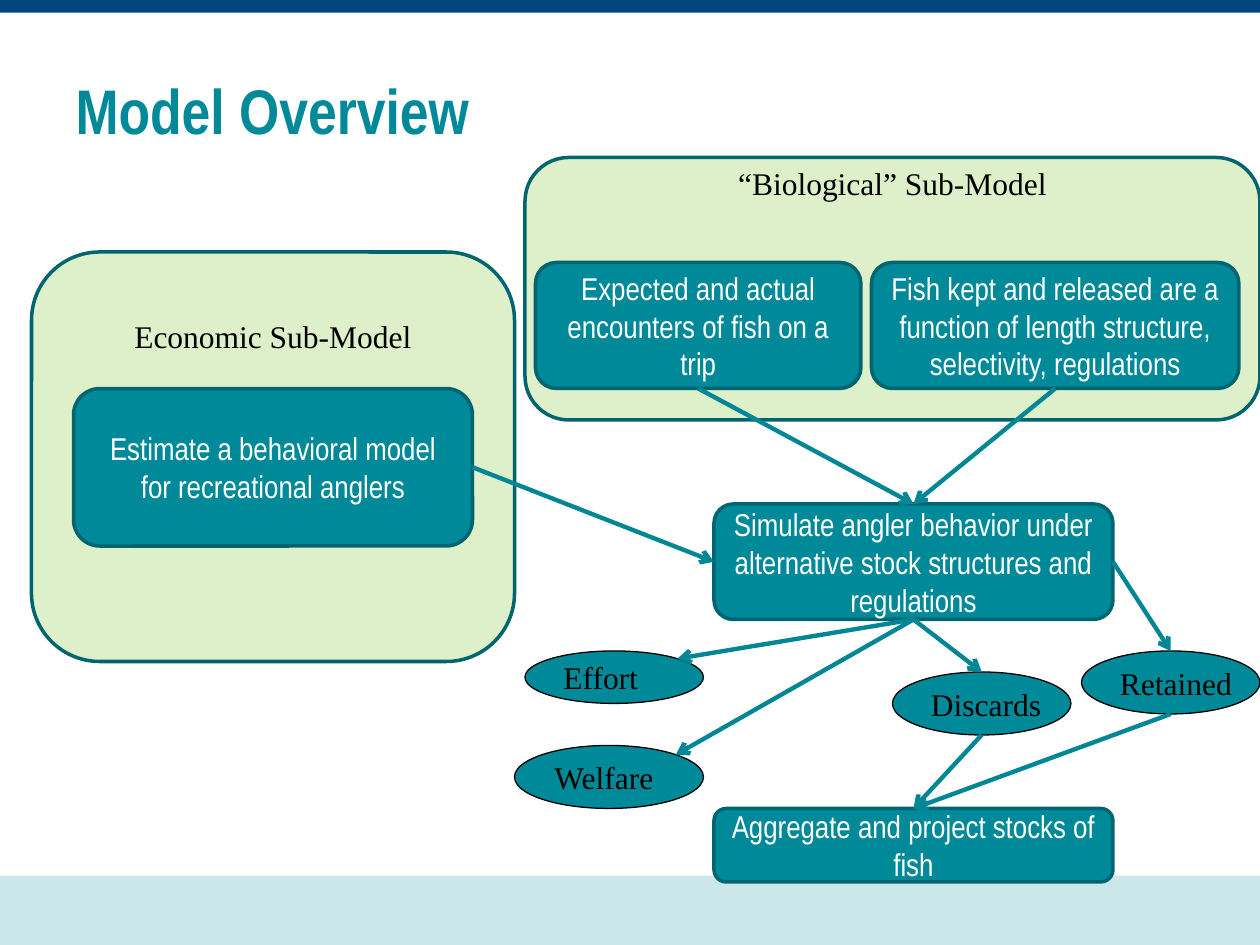
import pptx
import pptx.util
import pptx.enum.shapes
import pptx.enum.text
import pptx.dml.color
import pptx.oxml
import pptx.oxml.ns

COLS, ROWS = 120, 90
WIDTH, HEIGHT = pptx.util.Inches(10), pptx.util.Inches(7.5)
HEX = {"teal": "008998", "edge": "006570", "arrow": "008695", "green": "92D050",
       "navy": "00467F", "pale": "CCE7EA", "white": "FFFFFF", "black": "000000"}
SANS, SERIF = "Arial Narrow", "Times New Roman"
FORM = pptx.enum.shapes.MSO_SHAPE
ALIGN = pptx.enum.text.PP_ALIGN
MIDDLE = pptx.enum.text.MSO_ANCHOR.MIDDLE
CUT = 0.5 - 0.5 ** 1.5  # share of an oval's size outside its diagonal point
SIDES = {"top": (0.5, 0), "left": (0, 0.5), "bottom": (0.5, 1),
         "right": (1, 0.5), "corner": (1 - CUT, CUT)}
SITES = {"top": 0, "left": 1, "bottom": 2, "right": 3}


def color(name):
    return pptx.dml.color.RGBColor.from_string(HEX[name])


def place(col, row, wide, high):
    """Turn a box in grid units into slide lengths."""
    return (round(col * WIDTH / COLS), round(row * HEIGHT / ROWS),
            round(wide * WIDTH / COLS), round(high * HEIGHT / ROWS))


def inside(box, col, row, wide, high):
    """Shift a box so that it counts from the corner of an outer box."""
    return box[0] + col, box[1] + row, wide, high


def write(shape, text, font, tint, align, size=18, bold=False):
    para = shape.text_frame.paragraphs[0]
    para.alignment = align
    run = para.add_run()
    run.text = text
    run.font.name, run.font.size = font, pptx.util.Pt(size)
    run.font.bold = bold
    run.font.color.rgb = color(tint)


def draw(slide, form, box, fill, line=None, weight=2):
    shape = slide.shapes.add_shape(form, *place(*box))
    shape.shadow.inherit = False
    shape.fill.solid()
    shape.fill.fore_color.rgb = color(fill)
    if line:
        shape.line.color.rgb = color(line)
        shape.line.width = pptx.util.Pt(weight)
    else:
        shape.line.fill.background()
    return shape


def panel(slide, box, text, drop):
    """Draw a see-through panel with its label a few rows below the top."""
    shape = draw(slide, FORM.ROUNDED_RECTANGLE, box, "green", "edge")
    tint = shape.fill._xPr.find(".//" + pptx.oxml.ns.qn("a:srgbClr"))
    alpha = tint.makeelement(pptx.oxml.ns.qn("a:alpha"), {"val": "30000"})
    tint.append(alpha)
    label = slide.shapes.add_textbox(*place(*inside(box, 0, drop, box[2], 4.8)))
    label.text_frame.word_wrap = True
    write(label, text, SERIF, "black", ALIGN.CENTER)


def step(slide, box, text):
    shape = draw(slide, FORM.ROUNDED_RECTANGLE, box, "teal", "edge")
    shape.text_frame.word_wrap = True
    shape.text_frame.vertical_anchor = MIDDLE
    write(shape, text, SANS, "white", ALIGN.CENTER)
    return shape


def oval(slide, box, text):
    shape = draw(slide, FORM.OVAL, box, "teal", "black", 0.75)
    shape.text_frame.word_wrap = False
    shape.text_frame.vertical_anchor = MIDDLE
    write(shape, text, SERIF, "black", ALIGN.LEFT)
    return shape


def point(shape, side):
    across, down = SIDES[side]
    return (round(shape.left + across * shape.width),
            round(shape.top + down * shape.height))


def link(slide, start, out, end, into):
    """Draw an arrow between two sides, joined where the shape is a box."""
    line = slide.shapes.add_connector(pptx.enum.shapes.MSO_CONNECTOR.STRAIGHT,
                                      *point(start, out), *point(end, into))
    if start.auto_shape_type == FORM.ROUNDED_RECTANGLE:
        line.begin_connect(start, SITES[out])
    if end.auto_shape_type == FORM.ROUNDED_RECTANGLE:
        line.end_connect(end, SITES[into])
    line.line.color.rgb = color("arrow")
    line.line.width = pptx.util.Pt(2.5)
    stroke = line.line._get_or_add_ln()
    stroke.append(stroke.makeelement(pptx.oxml.ns.qn("a:tailEnd"), {"type": "arrow"}))
    props = line._element.spPr
    props.append(props.makeelement(pptx.oxml.ns.qn("a:effectLst"), {}))


def bands(slide):
    draw(slide, FORM.RECTANGLE, (0, 83.4, COLS, 6.6), "pale")
    draw(slide, FORM.RECTANGLE, (0, 0, COLS, 1.2), "navy")


def head(slide, box, text):
    title = slide.shapes.title
    title.left, title.top, title.width, title.height = place(*box)
    title.text_frame.vertical_anchor = MIDDLE
    write(title, text, SANS, "teal", ALIGN.LEFT, 36, True)


def money(slide, box):
    """Place the economic sub-model."""
    panel(slide, box, "Economic Sub-Model", 5.6)
    return step(slide, inside(box, 4, 13, 38, 15),
                "Estimate a behavioral model for recreational anglers")


def nature(slide, box):
    """Place the biological sub-model."""
    panel(slide, box, "“Biological” Sub-Model", 0)
    return [step(slide, inside(box, col, 10, wide, 12), text) for col, wide, text in (
        (1, 31, "Expected and actual encounters of fish on a trip"),
        (33, 35, "Fish kept and released are a function of length structure, "
                 "selectivity, regulations"))]


def flow(slide, box):
    """Place the simulation, its outcomes and the stock projection."""
    trial = step(slide, inside(box, 19, 0, 38, 11),
                 "Simulate angler behavior under alternative stock structures "
                 "and regulations")
    stock = step(slide, inside(box, 19, 29, 38, 7),
                 "Aggregate and project stocks of fish")
    for text, area, out, into, feeds in (
            ("Retained", (54, 14, 17, 6), "right", "top", True),
            ("Discards", (36, 16, 17, 6), "bottom", "top", True),
            ("Effort", (1, 14, 17, 5), "bottom", "corner", False),
            ("Welfare", (0, 23, 18, 6), "bottom", "corner", False)):
        result = oval(slide, inside(box, *area), text)
        link(slide, trial, out, result, into)
        if feeds:
            link(slide, result, "bottom", stock, "top")
    return trial


def main():
    deck = pptx.Presentation()
    deck.slide_width, deck.slide_height = WIDTH, HEIGHT
    slide = deck.slides.add_slide(deck.slide_layouts[5])
    bands(slide)
    head(slide, (6, 6, 108, 8.9), "Model Overview")
    causes = nature(slide, (50, 15, 70, 25))
    choice = money(slide, (3, 24, 46, 39))
    trial = flow(slide, (49, 48, 71, 36))
    for cause in causes:
        link(slide, cause, "bottom", trial, "top")
    link(slide, choice, "right", trial, "left")
    deck.save("out.pptx")


if __name__ == "__main__":
    main()
